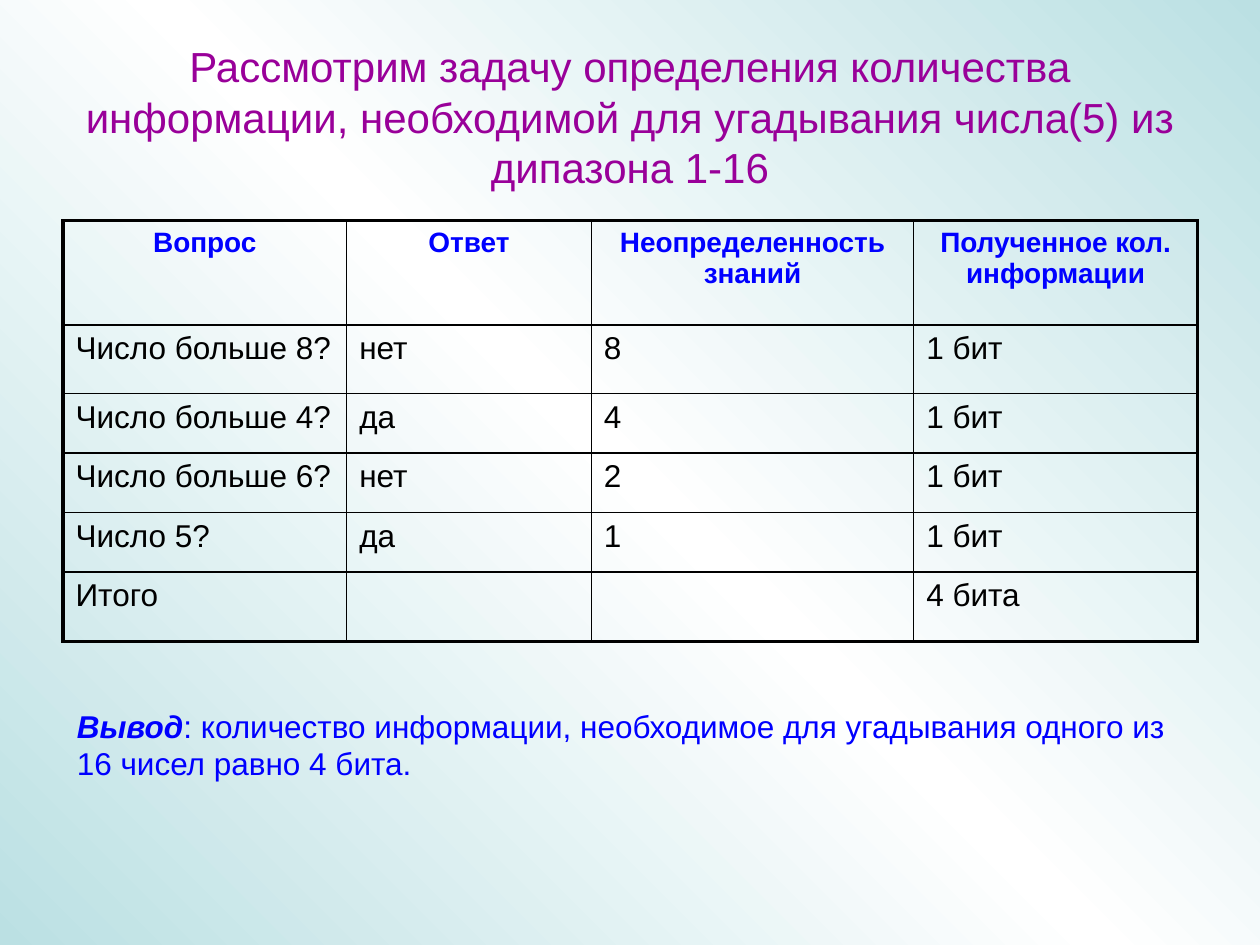
from copy import deepcopy

from lxml import etree
from pptx import Presentation
from pptx.dml.color import RGBColor
from pptx.enum.text import MSO_ANCHOR, MSO_AUTO_SIZE, PP_ALIGN
from pptx.oxml.ns import qn
from pptx.util import Cm, Pt

CENTER, LEFT = PP_ALIGN.CENTER, PP_ALIGN.LEFT
MIDDLE = MSO_ANCHOR.MIDDLE
GROW = MSO_AUTO_SIZE.SHAPE_TO_FIT_TEXT

BLACK = RGBColor(0x00, 0x00, 0x00)
WHITE = RGBColor(0xFF, 0xFF, 0xFF)
BLUE = RGBColor(0x00, 0x00, 0xFF)
PURPLE = RGBColor(0x99, 0x00, 0x99)
TEAL = RGBColor(0xBB, 0xE0, 0xE3)

TITLE = ("Рассмотрим задачу определения количества информации, "
         "необходимой для угадывания числа(5) из дипазона 1-16")
QUESTIONS = [
    ("Вопрос", "Ответ", "Неопределенность знаний", "Полученное кол. информации"),
    ("Число больше 8?", "нет", "8", "1 бит"),
    ("Число больше 4?", "да", "4", "1 бит"),
    ("Число больше 6?", "нет", "2", "1 бит"),
    ("Число 5?", "да", "1", "1 бит"),
    ("Итого", "", "", "4 бита"),
]
COLUMN_WIDTHS = (5.72, 4.93, 6.5, 5.72)
ROW_HEIGHTS = (2.1, 1.38, 1.2, 1.2, 1.2, 1.4)
CONCLUSION = ("Вывод", ": количество информации, необходимое для угадывания "
              "одного из 16 чисел равно 4 бита.")


class SlideBuilder:
    font_name = "Arial"
    thin, thick = Pt(1), Pt(2.25)

    def __init__(self, slide):
        self.slide = slide

    def style(self, paragraph, size, color, bold=False, align=LEFT):
        paragraph.alignment = align
        font = paragraph.font
        font.name, font.size, font.bold = self.font_name, Pt(size), bold
        font.color.rgb = color

    def background(self, edge, middle):
        """Diagonal gradient running edge, middle, edge."""
        fill = self.slide.background.fill
        fill.gradient()
        fill.gradient_angle = 45
        stops = fill._fill._gradFill.find(qn("a:gsLst"))
        stops.append(deepcopy(stops[-1]))
        for stop, position, color in zip(
                fill.gradient_stops, (0, 0.5, 1), (edge, middle, edge)):
            stop.position = position
            stop.color.rgb = color

    def title(self, text, left, top, width, height):
        shape = self.slide.shapes.title
        shape.left, shape.top = Cm(left), Cm(top)
        shape.width, shape.height = Cm(width), Cm(height)
        frame = shape.text_frame
        frame.text = text
        frame.vertical_anchor = MIDDLE
        frame.auto_size = MSO_AUTO_SIZE.NONE
        self.style(frame.paragraphs[0], 24, PURPLE, align=CENTER)

    def borders(self, cell, widths):
        """Set line widths in the order left, right, top, bottom."""
        properties = cell._tc.get_or_add_tcPr()
        for index, (side, width) in enumerate(zip("LRTB", widths)):
            line = etree.Element(qn(f"a:ln{side}"), w=str(int(width)))
            fill = etree.SubElement(line, qn("a:solidFill"))
            etree.SubElement(fill, qn("a:srgbClr"), val=str(BLACK))
            properties.insert(index, line)

    def table(self, rows, column_widths, row_heights, left, top):
        row_count, column_count = len(rows), len(column_widths)
        table = self.slide.shapes.add_table(
            row_count, column_count, Cm(left), Cm(top),
            Cm(sum(column_widths)), Cm(sum(row_heights))).table
        table.first_row = table.horz_banding = False
        for column, width in zip(table.columns, column_widths):
            column.width = Cm(width)
        for row, height in zip(table.rows, row_heights):
            row.height = Cm(height)
        for i, texts in enumerate(rows):
            for j, text in enumerate(texts):
                cell = table.cell(i, j)
                cell.text = text
                cell.fill.background()
                outer = (j == 0, j == column_count - 1, i == 0, i == row_count - 1)
                self.borders(cell, [self.thick if edge else self.thin for edge in outer])
                paragraph = cell.text_frame.paragraphs[0]
                if i == 0:
                    self.style(paragraph, 16, BLUE, bold=True, align=CENTER)
                else:
                    self.style(paragraph, 18, BLACK)

    def conclusion(self, lead, text, left, top, width, height):
        frame = self.slide.shapes.add_textbox(
            Cm(left), Cm(top), Cm(width), Cm(height)).text_frame
        frame.word_wrap = True
        frame.auto_size = GROW
        paragraph = frame.paragraphs[0]
        self.style(paragraph, 18, BLUE)
        paragraph.space_before = Pt(9)
        lead_run = paragraph.add_run()
        lead_run.text = lead
        lead_run.font.bold = lead_run.font.italic = True
        paragraph.add_run().text = text


def main():
    presentation = Presentation()
    presentation.slide_width, presentation.slide_height = Cm(25.4), Cm(19.05)
    title_only = presentation.slide_layouts[5]
    builder = SlideBuilder(presentation.slides.add_slide(title_only))
    builder.background(TEAL, WHITE)
    builder.title(TITLE, 1.27, 0.76, 22.86, 3.18)
    builder.table(QUESTIONS, COLUMN_WIDTHS, ROW_HEIGHTS, 1.27, 4.45)
    builder.conclusion(*CONCLUSION, 1.3, 14.12, 22.8, 1.78)
    presentation.save("out.pptx")


if __name__ == "__main__":
    main()
